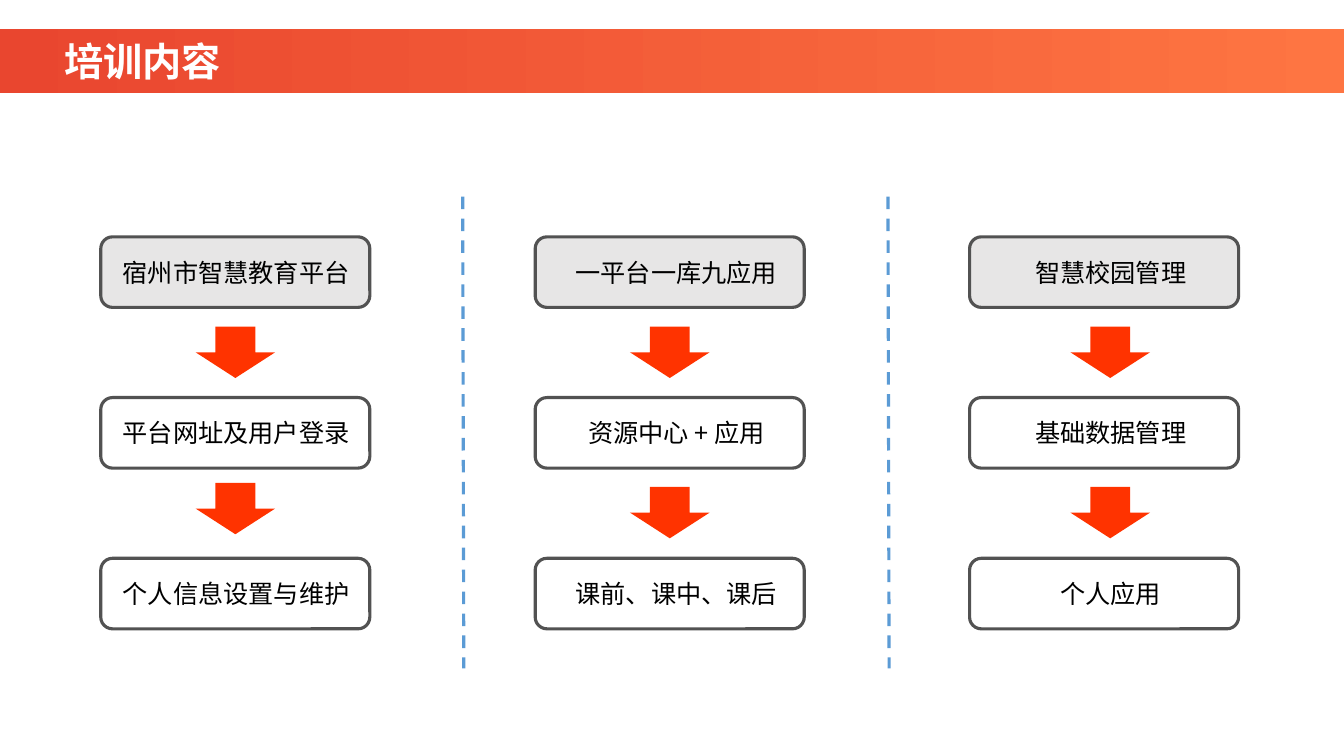
from lxml.etree import SubElement
from pptx import Presentation
from pptx.dml.color import RGBColor
from pptx.enum.dml import MSO_LINE
from pptx.enum.shapes import MSO_CONNECTOR, MSO_SHAPE
from pptx.enum.text import MSO_ANCHOR, PP_ALIGN
from pptx.oxml.ns import qn
from pptx.util import Pt

TITLE = "培训内容"
COLUMNS = [
    ["宿州市智慧教育平台", "平台网址及用户登录", "个人信息设置与维护"],
    ["一平台一库九应用", "资源中心 + 应用", "课前、课中、课后"],
    ["智慧校园管理", "基础数据管理", "个人应用"],
]
COLUMN_ALIGN = [PP_ALIGN.LEFT, PP_ALIGN.CENTER, PP_ALIGN.CENTER]
ARROW_X = [139.7, 450, 764.6]
ARROW_Y = [(233.3, 344.9), (233.3, 347.8), (233.3, 347.8)]
DIVIDER_X = [330.5, 634.3]

FONT = "Noto Sans CJK SC"
BLACK = RGBColor(0x00, 0x00, 0x00)
WHITE = RGBColor(0xFF, 0xFF, 0xFF)
GREY = RGBColor(0xE7, 0xE6, 0xE6)
BORDER = RGBColor(0x52, 0x52, 0x52)
ORANGE = RGBColor(0xFF, 0x33, 0x00)
BLUE = RGBColor(0x5B, 0x9B, 0xD5)
BAR_START = RGBColor(0xE9, 0x46, 0x2F)
BAR_END = RGBColor(0xFE, 0x75, 0x42)

BOX_X, BOX_Y, BOX_W, BOX_H = 72, 169.2, 192.2, 50.4
COL_STEP, ROW_STEP = 310.3, 114.8
TEXT_DX, TEXT_DY, TEXT_W, TEXT_H = 8.6, 10.8, 184.3, 28.8
ARROW_W, ARROW_H = 56.9, 36.7
DIVIDER_TOP, DIVIDER_BOTTOM, DIVIDER_LEAN = 140.4, 477.4, 0.8

prs = Presentation()
prs.slide_width, prs.slide_height = Pt(960), Pt(540)
s = prs.slides.add_slide(prs.slide_layouts[6])


def add_shape(kind, x, y, w, h, fill=None, border=None):
    sp = s.shapes.add_shape(kind, Pt(x), Pt(y), Pt(w), Pt(h))
    sp.shadow.inherit = False
    if fill is None:
        sp.fill.background()
    else:
        sp.fill.solid()
        sp.fill.fore_color.rgb = fill
    if border is None:
        sp.line.fill.background()
    else:
        sp.line.color.rgb = border
        sp.line.width = Pt(2.25)
    return sp


def add_text(text, x, y, w, h, size, color, align=PP_ALIGN.LEFT, bold=False):
    tf = s.shapes.add_textbox(Pt(x), Pt(y), Pt(w), Pt(h)).text_frame
    tf.word_wrap = True
    tf.vertical_anchor = MSO_ANCHOR.MIDDLE
    p = tf.paragraphs[0]
    p.alignment = align
    r = p.add_run()
    r.text = text
    r.font.name = FONT
    r.font.size = Pt(size)
    r.font.bold = bold
    r.font.color.rgb = color
    SubElement(r.font._element, qn("a:ea")).set("typeface", FONT)


for col, labels in enumerate(COLUMNS):
    x = BOX_X + col * COL_STEP
    for row, label in enumerate(labels):
        y = BOX_Y + row * ROW_STEP
        add_shape(MSO_SHAPE.ROUNDED_RECTANGLE, x, y, BOX_W, BOX_H,
                  GREY if row == 0 else None, BORDER)
        add_text(label, x + TEXT_DX, y + TEXT_DY, TEXT_W, TEXT_H,
                 18, BLACK, COLUMN_ALIGN[col])
    for y in ARROW_Y[col]:
        add_shape(MSO_SHAPE.DOWN_ARROW, ARROW_X[col], y, ARROW_W, ARROW_H, ORANGE)

for x in DIVIDER_X:
    line = s.shapes.add_connector(MSO_CONNECTOR.STRAIGHT, Pt(x), Pt(DIVIDER_TOP),
                                  Pt(x + DIVIDER_LEAN), Pt(DIVIDER_BOTTOM))
    line.line.color.rgb = BLUE
    line.line.width = Pt(2.25)
    line.line.dash_style = MSO_LINE.DASH
    SubElement(line._element.spPr, qn("a:effectLst"))

bar = add_shape(MSO_SHAPE.RECTANGLE, 0, 20.9, 960, 45.4)
bar.fill.gradient()
bar.fill.gradient_angle = 0
for stop, color, position in zip(bar.fill.gradient_stops, (BAR_START, BAR_END), (0, 1)):
    stop.color.rgb = color
    stop.position = position
add_text(TITLE, 38.9, 23, 741.6, 41, 28, WHITE, bold=True)

prs.save("out.pptx")
